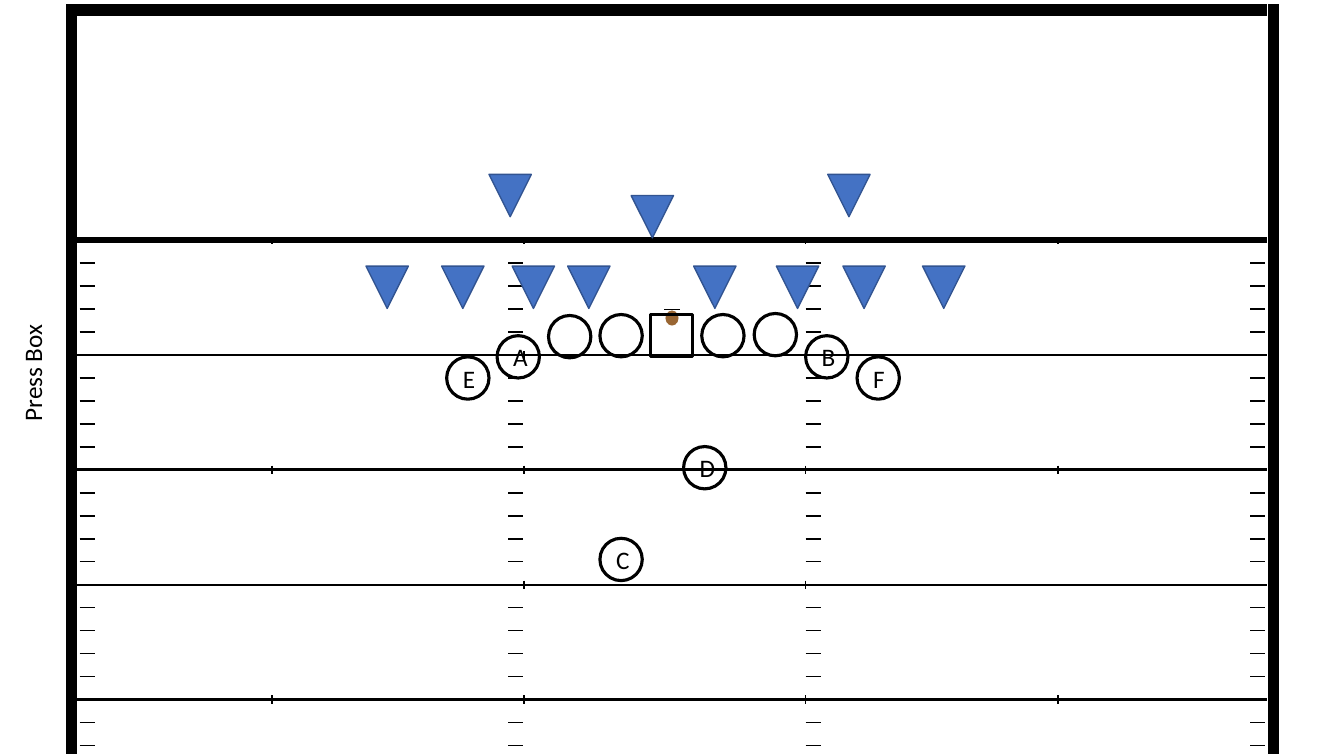
from lxml.etree import SubElement
from pptx import Presentation
from pptx.dml.color import RGBColor
from pptx.enum.shapes import MSO_CONNECTOR as Connector, MSO_SHAPE as Preset
from pptx.enum.text import MSO_ANCHOR as Anchor, MSO_AUTO_SIZE as AutoSize, PP_ALIGN as Align
from pptx.oxml.ns import qn
from pptx.util import Inches, Pt

COLORS = {"black": "000000", "ball": "996633", "defense": "4472C4", "defense_edge": "325491"}
FONT_FORMAT = {"name": "Calibri", "size": Pt(18)}
LABEL_FRAME = {"word_wrap": False, "auto_size": AutoSize.SHAPE_TO_FIT_TEXT}

SLIDE_WIDTH, SLIDE_HEIGHT = 13.33, 7.5
FIELD_LEFT, FIELD_RIGHT, FIELD_TOP = 0.76, 12.57, 2.38
LINE_GAP = 1.14  # five yards
LINE_WIDTHS = [4, 1.25, 2, 1.25, 2]
HASH_LEFTS = [0.79, 5.04, 7.99, 12.4]
HASH_LENGTH = 0.15
INNER_TICKS, OUTER_TICKS = [5.2, 7.99], [2.7, 10.49]
PLAYER_SIZE = 0.42

LINEMEN = [(5.95, 3.12), (6.96, 3.12), (5.44, 3.13), (7.48, 3.11)]
BACKS = {"C": (5.95, 5.34), "D": (6.78, 4.43), "A": (4.93, 3.33),
         "B": (7.99, 3.33), "F": (8.5, 3.54), "E": (4.43, 3.54)}
SAFETIES = [(4.85, 1.73), (6.26, 1.94), (8.21, 1.73)]
FRONT_TOP = 2.64
FRONT_LEFTS = [5.63, 9.15, 6.88, 4.38, 8.36, 3.63, 5.08, 7.7]


def color(name):
    return RGBColor.from_string(COLORS[name])


def set_format(target, values):
    for name, value in values.items():
        setattr(target, name, value)


def add_line(slide, x1, y1, x2, y2, width=1.25):
    line = slide.shapes.add_connector(
        Connector.STRAIGHT, Inches(x1), Inches(y1), Inches(x2), Inches(y2))
    line.line.color.rgb = color("black")
    line.line.width = Pt(width)
    SubElement(line._element.spPr, qn("a:effectLst"))


def add_marker(slide, preset, left, top, width=PLAYER_SIZE, height=PLAYER_SIZE,
               fill=None, edge="black", edge_width=2.25, rotation=0):
    shape = slide.shapes.add_shape(
        preset, Inches(left), Inches(top), Inches(width), Inches(height))
    shape.shadow.inherit = False
    shape.rotation = rotation
    if fill:
        shape.fill.solid()
        shape.fill.fore_color.rgb = color(fill)
    else:
        shape.fill.background()
    if edge:
        shape.line.color.rgb = color(edge)
        shape.line.width = Pt(edge_width)
    else:
        shape.line.fill.background()
    return shape


def write_text(frame, text, align):
    paragraph = frame.paragraphs[0]
    paragraph.alignment = align
    run = paragraph.add_run()
    run.text = text
    set_format(run.font, FONT_FORMAT)
    run.font.color.rgb = color("black")


def add_defender(slide, left, top):
    add_marker(slide, Preset.ISOSCELES_TRIANGLE, left, top, fill="defense",
               edge="defense_edge", edge_width=1, rotation=180)


def add_press_box(slide):
    box = slide.shapes.add_textbox(Inches(0.12), Inches(3.21), Inches(0.5), Inches(1.07))
    frame = box.text_frame
    set_format(frame, LABEL_FRAME)
    frame._txBody.bodyPr.set("vert", "vert270")
    write_text(frame, "Press Box", Align.LEFT)


def draw_field(slide):
    for index, width in enumerate(LINE_WIDTHS):
        y = FIELD_TOP + index * LINE_GAP
        add_line(slide, FIELD_LEFT, y, FIELD_RIGHT, y, width)

        # Cross ticks: the outer pair only on every second line
        tick_top = y - 0.04 if index else y
        for x in INNER_TICKS + (OUTER_TICKS if index % 2 == 0 else []):
            add_line(slide, x, tick_top, x, y + 0.04)

        # Four one-yard hashes between two lines
        for yard in range(1, 5):
            hash_y = y + yard * LINE_GAP / 5
            if hash_y < SLIDE_HEIGHT:
                for x in HASH_LEFTS:
                    add_line(slide, x, hash_y, x + HASH_LENGTH, hash_y)

    # Thick border, open at the bottom
    for x in (0.71, 12.63):
        add_line(slide, x, 7.48, x, 0.04, 8)
    add_line(slide, FIELD_LEFT, 0.1, FIELD_RIGHT, 0.1, 8)


def draw_ball(slide):
    add_line(slide, 6.59, 3.07, 6.74, 3.07)
    add_marker(slide, Preset.OVAL, 6.59, 3.09, 0.15, 0.13,
               fill="ball", edge=None, rotation=90)


def draw_offense(slide):
    add_marker(slide, Preset.RECTANGLE, 6.45, 3.12)
    for left, top in LINEMEN:
        add_marker(slide, Preset.OVAL, left, top)
    for letter, (left, top) in BACKS.items():
        back = add_marker(slide, Preset.OVAL, left, top)
        back.text_frame.vertical_anchor = Anchor.MIDDLE
        write_text(back.text_frame, letter, Align.JUSTIFY)


def draw_defense(slide):
    for left, top in SAFETIES:
        add_defender(slide, left, top)
    for left in FRONT_LEFTS:
        add_defender(slide, left, FRONT_TOP)


def main():
    presentation = Presentation()
    presentation.slide_width = Inches(SLIDE_WIDTH)
    presentation.slide_height = Inches(SLIDE_HEIGHT)
    slide = presentation.slides.add_slide(presentation.slide_layouts[6])
    draw_field(slide)
    draw_ball(slide)
    add_press_box(slide)
    draw_offense(slide)
    draw_defense(slide)
    presentation.save("out.pptx")


if __name__ == "__main__":
    main()
